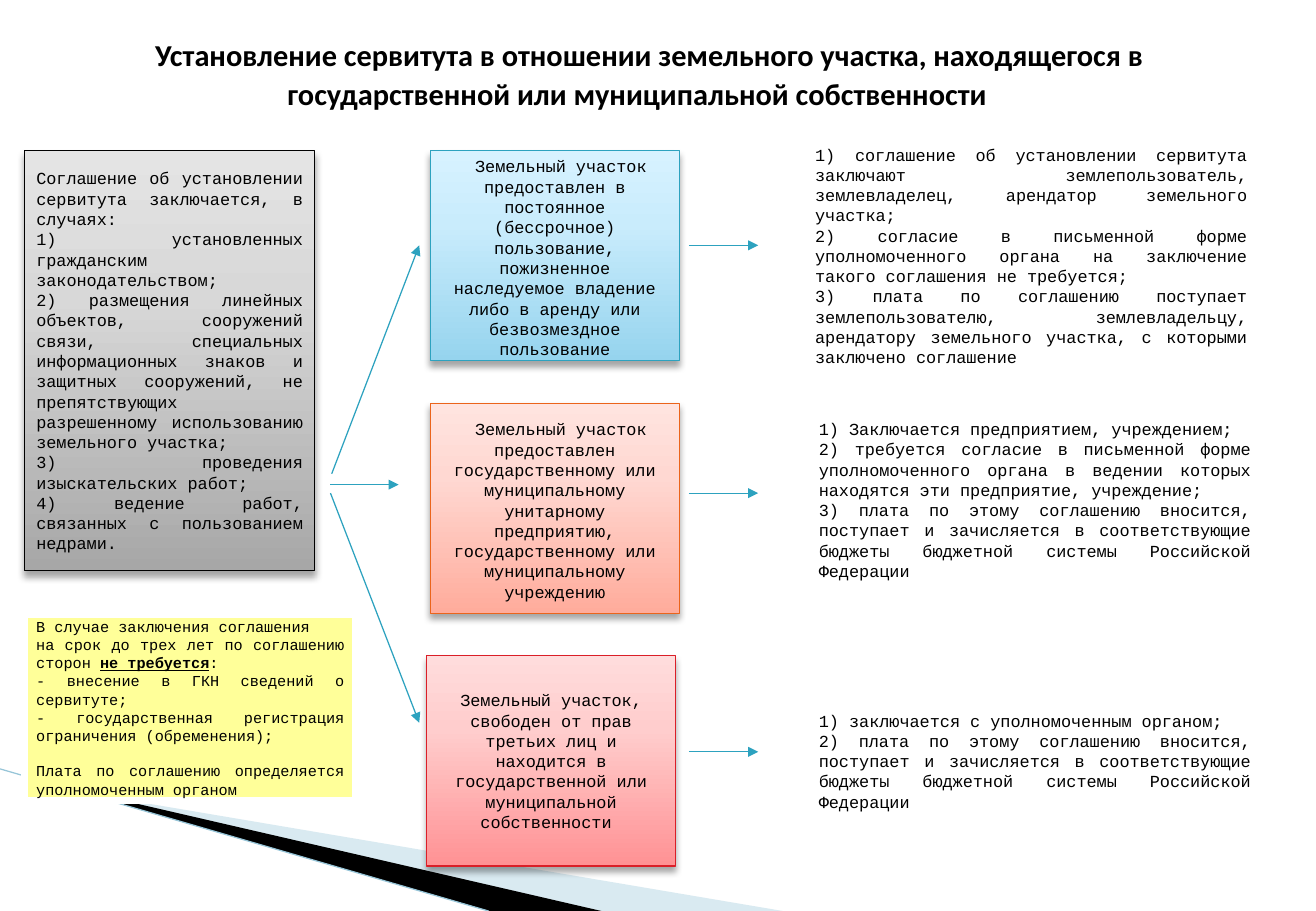
"""Builds the slide on establishing an easement over state or municipal land."""
from lxml import etree
from pptx import Presentation
from pptx import util as u
from pptx.dml.color import RGBColor
from pptx.enum import shapes, text
from pptx.oxml.ns import qn

PX = 9144
THEME = {
    "black": "000000", "white": "FFFFFF", "note": "FFFF99", "arrow": "2DA2BF",
    "wedge": "A0CBDC", "wedge_line": "97C5D8",
    "grey": ("000000", "A7A7A7", "D8D8D8", "E4E4E4"),
    "blue": ("2DA2BF", "96D4EE", "C9ECFC", "D7F2FF"),
    "orange": ("EB641B", "FFAC9C", "FFD8D2", "FFE4DF"),
    "red": ("DA1F28", "FF9294", "FFCDCD", "FFDCDC"),
    "mono": "Courier New", "sans": "Calibri",
    "title": 18, "title_lead": 24, "lead": 12, "body": 10, "small": 9,
    "thin": 0.75, "thick": 4.33,
}
JUSTIFY, CENTER = text.PP_ALIGN.JUSTIFY, text.PP_ALIGN.CENTER


def write(tf, paras, align, size, font=THEME["mono"]):
    tf.word_wrap = True
    tf.vertical_anchor = text.MSO_ANCHOR.MIDDLE
    for i, runs in enumerate(paras):
        p = tf.paragraphs[0] if i == 0 else tf.add_paragraph()
        p.alignment = align
        for words, fmt in [(runs, {})] if isinstance(runs, str) else runs:
            r = p.add_run()
            r.text = words
            r.font.color.rgb = RGBColor.from_string(THEME["black"])
            for key, value in {"name": font, "size": u.Pt(size), **fmt}.items():
                setattr(r.font, key, value)


def box(at, fill, paras, align=JUSTIFY, size=THEME["body"]):
    sp = s.shapes.add_shape(shapes.MSO_SHAPE.RECTANGLE, *(v * PX for v in at))
    sp.shadow.inherit = False
    if isinstance(fill, str):
        sp.fill.solid()
        sp.fill.fore_color.rgb = RGBColor.from_string(fill)
        line, width = THEME["white"], THEME["thick"]
    else:
        line, *stops = fill
        width = THEME["thin"]
        sp.fill.gradient()
        sp.fill.gradient_angle = 90
        stop_list = sp._element.spPr.find(".//" + qn("a:gsLst"))
        stop_list.clear()
        for pos, color in zip((0, 65, 100), stops):
            gs = etree.SubElement(stop_list, qn("a:gs"), pos=str(pos * 1000))
            etree.SubElement(gs, qn("a:srgbClr"), val=color)
        effects = sp._element.spPr.find(qn("a:effectLst"))
        shadow = etree.SubElement(effects, qn("a:outerShdw"), blurRad=str(u.Pt(4)),
                                  dist=str(u.Pt(3)), dir="5400000", rotWithShape="0")
        tint = etree.SubElement(shadow, qn("a:srgbClr"), val=THEME["black"])
        etree.SubElement(tint, qn("a:alpha"), val="35000")
    sp.line.color.rgb = RGBColor.from_string(line)
    sp.line.width = u.Pt(width)
    write(sp.text_frame, paras, align, size)
    return sp


prs = Presentation()
prs.slide_width, prs.slide_height = 1083 * PX, 750 * PX
s = prs.slides.add_slide(prs.slide_layouts[5])

wedges = [
    (THEME["wedge"], 40, [(59, 651), (644, 750), (494, 750), (59, 650)]),
    (THEME["black"], 100, [(58, 649), (495, 750), (403, 750), (58, 650)]),
]
for color, alpha, points in wedges:
    fb = s.shapes.build_freeform(*points[0], scale=PX)
    fb.add_line_segments(points[1:], close=True)
    sp = fb.convert_to_shape()
    sp.shadow.inherit = False
    sp.fill.solid()
    sp.fill.fore_color.rgb = RGBColor.from_string(color)
    sp.line.fill.background()
    tint = sp._element.spPr.find(qn("a:solidFill"))[0]
    etree.SubElement(tint, qn("a:alpha"), val=str(alpha * 1000))

lines = [
    (0, 633, 402, 750, THEME["wedge_line"], False),
    (272, 399, 328, 399, THEME["arrow"], True),
    (272, 406, 345, 595, THEME["arrow"], True),
    (273, 390, 345, 202, THEME["arrow"], True),
] + [(567, y, 624, y, THEME["arrow"], True) for y in (202, 406, 619)]
for x1, y1, x2, y2, color, arrow in lines:
    cx = s.shapes.add_connector(shapes.MSO_CONNECTOR.STRAIGHT,
                                x1 * PX, y1 * PX, x2 * PX, y2 * PX)
    cx.line.color.rgb = RGBColor.from_string(color)
    cx.line.width = u.Pt(THEME["thin"])
    if arrow:
        etree.SubElement(cx.line._get_or_add_ln(), qn("a:tailEnd"), type="triangle")
    etree.SubElement(cx._element.spPr, qn("a:effectLst"))

title = s.shapes.title
for key, value in {"left": 69, "top": 13, "width": 911, "height": 87}.items():
    setattr(title, key, value * PX)
write(title.text_frame, [[
    (" ", {"name": THEME["mono"], "size": u.Pt(THEME["title_lead"]), "bold": True}),
    ("Установление сервитута в отношении земельного участка, находящегося в "
     "государственной или муниципальной собственности", {"bold": True}),
]], CENTER, THEME["title"], THEME["sans"])

box((20, 124, 239, 346), THEME["grey"], [
    "Соглашение об установлении сервитута заключается, в случаях:",
    "1) установленных гражданским законодательством;",
    "2) размещения линейных объектов, сооружений связи, специальных информационных "
    "знаков и защитных сооружений, не препятствующих разрешенному использованию "
    "земельного участка;",
    "3) проведения изыскательских работ;",
    "4) ведение работ, связанных с пользованием недрами.",
])

lead = (" ", {"size": u.Pt(THEME["lead"])})
cases = [
    (354, THEME["blue"], [[lead, (
        "Земельный участок предоставлен в постоянное (бессрочное) пользование, "
        "пожизненное наследуемое владение либо в аренду или безвозмездное "
        "пользование", {})]],
     661, 5, [
        "1) соглашение об установлении сервитута заключают землепользователь, "
        "землевладелец, арендатор земельного участка;",
        "2) согласие в письменной форме уполномоченного органа на заключение такого "
        "соглашения не требуется;",
        "3) плата по соглашению поступает землепользователю, землевладельцу, "
        "арендатору земельного участка, с которыми заключено соглашение"]),
    (354, THEME["orange"], [[lead, (
        "Земельный участок предоставлен государственному или муниципальному "
        "унитарному предприятию, государственному или муниципальному учреждению", {})]],
     664, 19, [
        "1) Заключается предприятием, учреждением;",
        "2) требуется согласие в письменной форме уполномоченного органа в ведении "
        "которых находятся эти предприятие, учреждение;",
        "3) плата по этому соглашению вносится, поступает и зачисляется в "
        "соответствующие бюджеты бюджетной системы Российской Федерации"]),
    (351, THEME["red"], [
        "Земельный участок, свободен от прав третьих лиц и находится в "
        "государственной или муниципальной собственности "],
     664, 5, [
        "1) заключается с уполномоченным органом;",
        "2) плата по этому соглашению вносится, поступает и зачисляется в "
        "соответствующие бюджеты бюджетной системы Российской Федерации"]),
]
for row, (case_x, fill, case, terms_x, inset, terms) in enumerate(cases):
    y = 124 + 208 * row
    box((case_x, y, 205, 173), fill, case, CENTER)
    sp = box((terms_x, y, 375, 173), THEME["white"], terms)
    sp.text_frame.margin_bottom = inset * PX

note = box((20, 506, 273, 153), THEME["note"], [
    "В случае заключения соглашения",
    [("на срок до трех лет по соглашению сторон ", {}),
     ("не требуется", {"bold": True, "underline": True}), (":", {})],
    "- внесение в ГКН сведений о сервитуте;",
    "- государственная регистрация ограничения (обременения);",
    "Плата по соглашению определяется уполномоченным органом",
], size=THEME["small"])
note.text_frame.paragraphs[-1].space_before = u.Pt(10)

prs.save("out.pptx")
